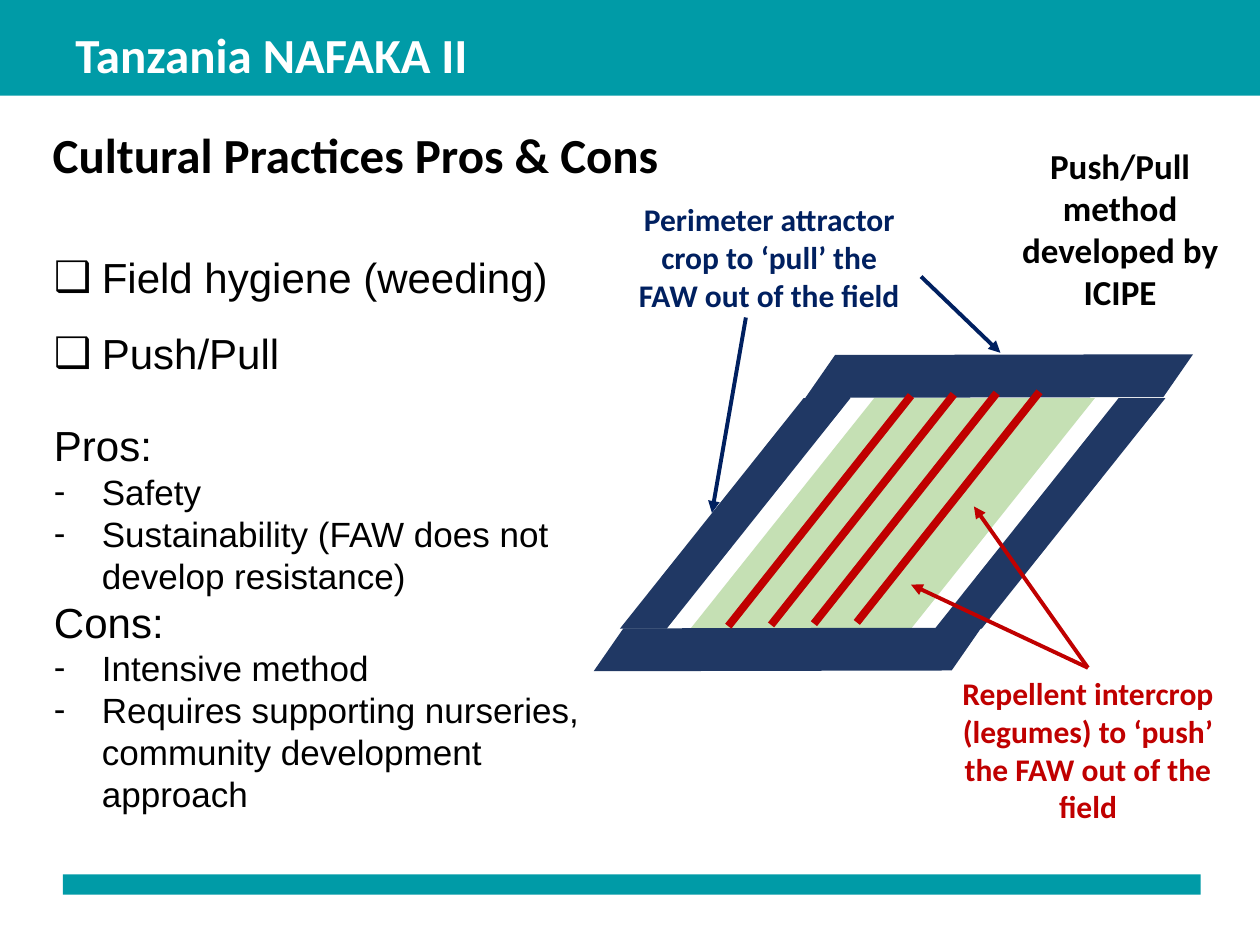
from typing import NamedTuple, Optional

from lxml.etree import SubElement
from pptx import Presentation
from pptx.dml.color import RGBColor
from pptx.enum.shapes import MSO_CONNECTOR as Connector, MSO_SHAPE as Preset
from pptx.enum.text import MSO_ANCHOR as Anchor, MSO_AUTO_SIZE as Fit, PP_ALIGN as Align
from pptx.oxml.ns import qn
from pptx.util import Inches, Pt

COLUMNS, ROWS = 100, 75
CELL = Inches(0.1)
SKEW = 0.797
COLORS = {
    "teal": "009BA7",
    "white": "FFFFFF",
    "black": "000000",
    "crop": "C5E0B4",
    "border": "203864",
    "pull": "002060",
    "push": "C00000",
}


class Area(NamedTuple):
    column: float
    row: float
    width: float
    height: float


class Point(NamedTuple):
    column: float
    row: float


class Block(NamedTuple):
    area: Area
    color: str
    preset: Preset = Preset.PARALLELOGRAM
    rotation: float = 0


class Line(NamedTuple):
    text: str
    size: float
    font: str = "Calibri"
    color: str = "black"
    bold: bool = True
    bullet: Optional[str] = None
    spacing: float = 1.0
    before: float = 0
    align: Optional[Align] = None


class Arrow(NamedTuple):
    start: Point
    end: Point
    color: str
    box: Optional[str] = None
    site: int = 0


def cells(*values: float) -> list[int]:
    return [round(value * CELL) for value in values]


def color(name: str) -> RGBColor:
    return RGBColor.from_string(COLORS[name])


def draw_block(page, block: Block) -> None:
    shape = page.shapes.add_shape(block.preset, *cells(*block.area))
    shape.shadow.inherit = False
    shape.fill.solid()
    shape.fill.fore_color.rgb = color(block.color)
    shape.line.fill.background()
    if block.preset == Preset.PARALLELOGRAM:
        shape.adjustments[0] = SKEW
    if block.rotation:
        shape.rotation = block.rotation
        shape.element.spPr.find(qn("a:xfrm")).set("flipH", "1")


def add_bullet(para, mark: str) -> None:
    properties = para._p.get_or_add_pPr()
    properties.set("marL", str(Inches(0.38)))
    properties.set("indent", str(-Inches(0.38)))
    SubElement(properties, qn("a:buFont")).set("typeface", "Arial")
    SubElement(properties, qn("a:buChar")).set("char", mark)


def draw_text(page, area: Area, lines: list[Line], anchor=Anchor.TOP, fit=Fit.NONE):
    box = page.shapes.add_textbox(*cells(*area))
    frame = box.text_frame
    frame.word_wrap = True
    frame.auto_size = fit
    frame.vertical_anchor = anchor
    for index, line in enumerate(lines):
        para = frame.add_paragraph() if index else frame.paragraphs[0]
        if line.bullet:
            add_bullet(para, line.bullet)
        para.line_spacing = line.spacing
        para.alignment = line.align
        if line.before:
            para.space_before = Pt(line.before)
        span = para.add_run()
        span.text = line.text
        span.font.name = line.font
        span.font.size = Pt(line.size)
        span.font.bold = line.bold
        span.font.color.rgb = color(line.color)
    return box


def draw_line(page, start: Point, end: Point, name: str, weight: float, head: bool = False):
    line = page.shapes.add_connector(Connector.STRAIGHT, *cells(*start, *end))
    line.line.color.rgb = color(name)
    line.line.width = Pt(weight)
    properties = line.element.spPr
    if head:
        SubElement(properties.find(qn("a:ln")), qn("a:tailEnd")).set("type", "triangle")
    SubElement(properties, qn("a:effectLst"))
    return line


def body(text: str, size: float = 24, **options) -> Line:
    return Line(text, size, "Arial", bold=False, **options)


BARS = [
    Block(Area(0, 0, COLUMNS, 7.6), "teal", Preset.RECTANGLE),
    Block(Area(5, 69.4, 90.3, 1.6), "teal", Preset.RECTANGLE),
]
FIELD = [
    Block(Area(54.8, 31.6, 32.1, 18.3), "crop"),
    Block(Area(49.2, 31.6, 18.3, 18.3), "border"),
    Block(Area(74.2, 31.6, 18.3, 18.3), "border"),
    Block(Area(52.3, 39.9, 20.4, 23.3), "border", rotation=304.8),
    Block(Area(69.1, 18.2, 20.4, 23.3), "border", rotation=304.8),
]
PRACTICES = [
    body("Field hygiene (weeding)", bullet="❑", spacing=1.5),
    body("Push/Pull", bullet="❑", spacing=1.5),
    body("Pros:", before=24),
    body("Safety", 20, bullet="-"),
    body("Sustainability (FAW does not develop resistance)", 20, bullet="-"),
    body("Cons:"),
    body("Intensive method", 20, bullet="-"),
    body("Requires supporting nurseries, community development approach", 20, bullet="-"),
]
NOTES = {
    "method": (Area(77.8, 11, 22.2, 17.8), "Push/Pull method developed by ICIPE", 20, "black"),
    "pull": (Area(49, 15.4, 24.1, 13.1),
             "Perimeter attractor crop to ‘pull’ the FAW out of the field", 18, "pull"),
    "push": (Area(74.3, 53, 24.1, 16.2),
             "Repellent intercrop (legumes) to ‘push’ the FAW out of the field", 18, "push"),
}
ARROWS = [
    Arrow(Point(73.1, 22), Point(79.4, 28), "pull", "pull", 3),
    Arrow(Point(59.2, 25.2), Point(56.5, 40.7), "pull"),
    Arrow(Point(86.3, 53), Point(77.3, 40.2), "push", "push", 0),
    Arrow(Point(86.3, 53), Point(72.3, 46.4), "push", "push", 0),
]


def main() -> None:
    deck = Presentation()
    deck.slide_width, deck.slide_height = cells(COLUMNS, ROWS)
    page = deck.slides.add_slide(deck.slide_layouts[6])

    for bar in BARS:
        draw_block(page, bar)
    draw_text(page, Area(5, 0.2, 83, 8.7),
              [Line("Tanzania NAFAKA II", 28, color="white", spacing=0.9)], Anchor.MIDDLE)
    draw_text(page, Area(3.2, 9.9, 92.5, 5),
              [Line("Cultural Practices Pros & Cons", 28, spacing=0.9)])
    draw_text(page, Area(3.3, 17.5, 46.8, 48.1), PRACTICES, fit=Fit.SHAPE_TO_FIT_TEXT)

    for block in FIELD:
        draw_block(page, block)
    for index in range(4):
        top = Point(72.3 + 3.4 * index, 31.4 - 0.1 * index)
        draw_line(page, top, Point(top.column - 14.5, top.row + 18.3), "push", 4.5)

    boxes = {}
    for key, (area, text, size, name) in NOTES.items():
        note = Line(text, size, color=name, align=Align.CENTER)
        boxes[key] = draw_text(page, area, [note], fit=Fit.SHAPE_TO_FIT_TEXT)
    for arrow in ARROWS:
        line = draw_line(page, arrow.start, arrow.end, arrow.color, 2.25, head=True)
        if arrow.box:
            line.begin_connect(boxes[arrow.box], arrow.site)

    deck.save("out.pptx")


if __name__ == "__main__":
    main()
